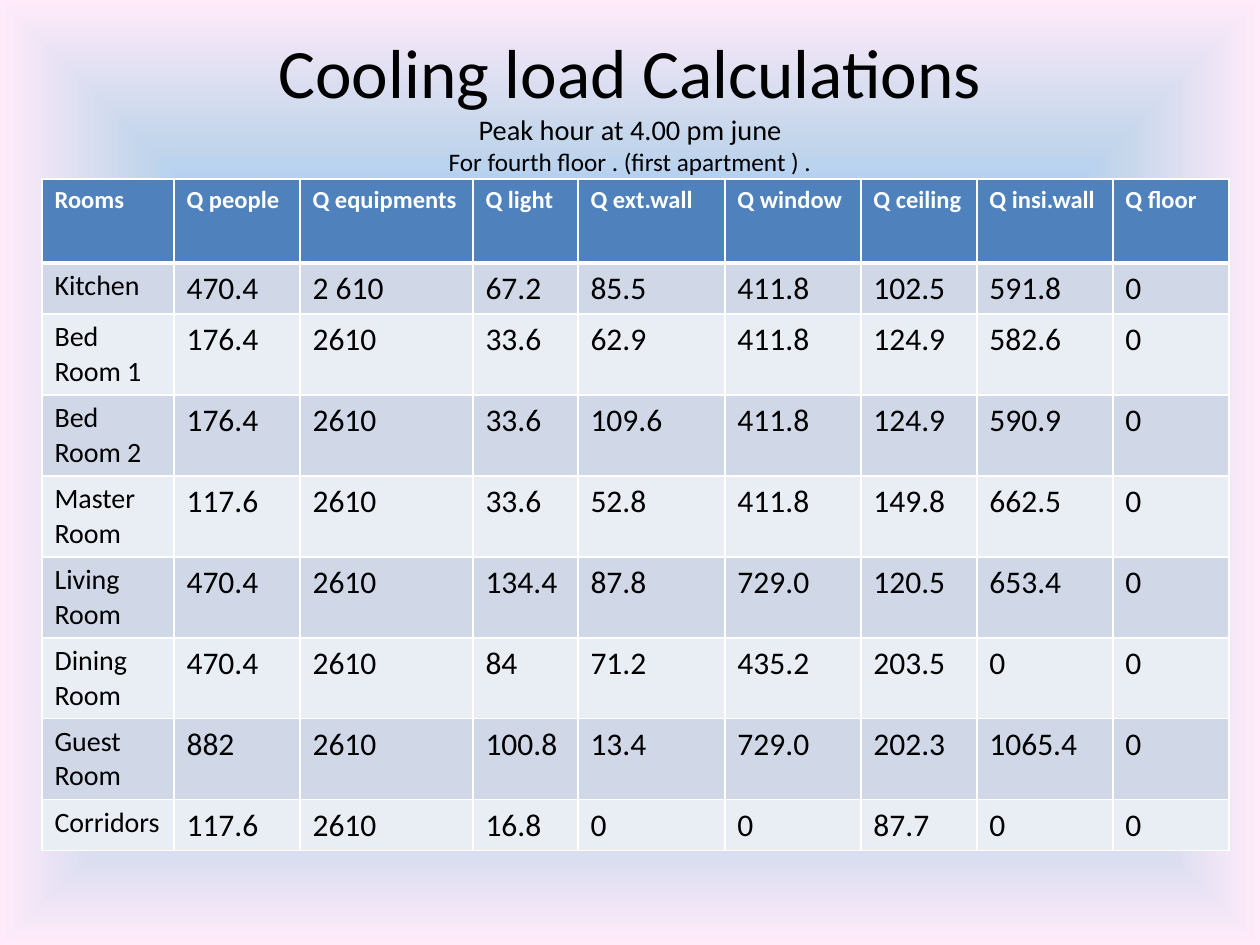
from pptx import Presentation, util as u
from pptx.dml.color import RGBColor
from pptx.enum import text
from pptx.oxml import parse_xml
from pptx.oxml.ns import nsdecls

PX = u.Inches(1) / 126
FONT = "Calibri"
BLACK = RGBColor(0x00, 0x00, 0x00)
WHITE = RGBColor(0xFF, 0xFF, 0xFF)
HEADER_BLUE = RGBColor(0x4F, 0x81, 0xBD)
BANDS = (RGBColor(0xD0, 0xD8, 0xE8), RGBColor(0xE9, 0xED, 0xF4))
BACKGROUND_STOPS = (
    (0, RGBColor(0x5E, 0x9E, 0xFF)),
    (40, RGBColor(0x85, 0xC2, 0xFF)),
    (70, RGBColor(0xC4, 0xD6, 0xEB)),
    (100, RGBColor(0xFF, 0xEB, 0xFA)),
)

TITLE_LINES = (
    ("Cooling load Calculations", 39.6),
    ("Peak hour at 4.00 pm june", 16.2),
    ("For fourth floor . (first apartment ) .", 14.4),
)
COLUMN_WIDTHS = (132, 126, 173, 105, 147, 136, 116, 136, 116)
ROW_HEIGHTS = (84, 51, *[81] * 6, 51)
LOADS = (
    ("Rooms", "Q people", "Q equipments", "Q light", "Q ext.wall",
     "Q window", "Q ceiling", "Q insi.wall", "Q floor"),
    ("Kitchen", "470.4", "2 610", "67.2", "85.5", "411.8", "102.5", "591.8", "0"),
    ("Bed Room 1", "176.4", "2610", "33.6", "62.9", "411.8", "124.9", "582.6", "0"),
    ("Bed Room 2", "176.4", "2610", "33.6", "109.6", "411.8", "124.9", "590.9", "0"),
    ("Master Room", "117.6", "2610", "33.6", "52.8", "411.8", "149.8", "662.5", "0"),
    ("Living Room", "470.4", "2610", "134.4", "87.8", "729.0", "120.5", "653.4", "0"),
    ("Dining Room", "470.4", "2610", "84", "71.2", "435.2", "203.5", "0", "0"),
    ("Guest Room", "882", "2610", "100.8", "13.4", "729.0", "202.3", "1065.4", "0"),
    ("Corridors", "117.6", "2610", "16.8", "0", "0", "87.7", "0", "0"),
)


def px(length):
    return u.Emu(round(length * PX))


def style_font(font, size, color, bold=False):
    font.name = FONT
    font.size = u.Pt(size)
    font.color.rgb = color
    font.bold = bold


def paint_background(slide):
    """Fill the slide with a gradient that spreads from its centre."""
    fill = slide.background.fill
    fill.gradient()
    stops = "".join(
        f'<a:gs pos="{position * 1000}"><a:srgbClr val="{color}"/></a:gs>'
        for position, color in BACKGROUND_STOPS)
    gradient = parse_xml(
        f'<a:gradFill {nsdecls("a")} rotWithShape="1"><a:gsLst>{stops}</a:gsLst>'
        '<a:path path="shape"><a:fillToRect l="50000" t="50000" r="50000" b="50000"/>'
        '</a:path></a:gradFill>')
    properties = slide.background._cSld.bg.bgPr
    properties.replace(properties[0], gradient)


def add_title(slide, left, top, width, height):
    box = slide.shapes.add_textbox(px(left), px(top), px(width), px(height))
    frame = box.text_frame
    frame.word_wrap = True
    frame.vertical_anchor = text.MSO_ANCHOR.MIDDLE
    frame.margin_top, frame.margin_bottom = 0, px(36)
    frame.text = "\n".join(line for line, _ in TITLE_LINES)
    for paragraph, (_, size) in zip(frame.paragraphs, TITLE_LINES):
        paragraph.alignment = text.PP_ALIGN.CENTER
        style_font(paragraph.runs[0].font, size, BLACK)


def set_borders(cell, row_index):
    """Draw white borders, with a heavy rule under the header row."""
    widths = {"L": 1, "R": 1,
              "T": 3 if row_index == 1 else 1,
              "B": 3 if row_index == 0 else 1}
    properties = cell._tc.get_or_add_tcPr()
    for side, width in widths.items():
        properties.append(parse_xml(
            f'<a:ln{side} {nsdecls("a")} w="{u.Pt(width)}"><a:solidFill>'
            f'<a:srgbClr val="{WHITE}"/></a:solidFill></a:ln{side}>'))


def fill_cell(cell, value, row_index, column_index):
    is_header = row_index == 0
    set_borders(cell, row_index)
    cell.fill.solid()
    cell.fill.fore_color.rgb = HEADER_BLUE if is_header else BANDS[(row_index - 1) % 2]
    cell.text_frame.text = value
    font = cell.text_frame.paragraphs[0].runs[0].font
    if is_header:
        style_font(font, 14, WHITE, bold=True)
    else:
        style_font(font, 16 if column_index == 0 else 18, BLACK)


def add_load_table(slide, left, top):
    table = slide.shapes.add_table(
        len(ROW_HEIGHTS), len(COLUMN_WIDTHS), px(left), px(top),
        px(sum(COLUMN_WIDTHS)), px(sum(ROW_HEIGHTS))).table
    for column, width in zip(table.columns, COLUMN_WIDTHS):
        column.width = px(width)
    for row, height in zip(table.rows, ROW_HEIGHTS):
        row.height = px(height)
    for row_index, values in enumerate(LOADS):
        for column_index, value in enumerate(values):
            fill_cell(table.cell(row_index, column_index), value, row_index, column_index)


def main():
    presentation = Presentation()
    presentation.slide_width, presentation.slide_height = px(1260), px(945)
    slide = presentation.slides.add_slide(presentation.slide_layouts[6])
    paint_background(slide)
    add_title(slide, 63, 42, 1134, 157)
    add_load_table(slide, 42, 179)
    presentation.save("out.pptx")


if __name__ == "__main__":
    main()
